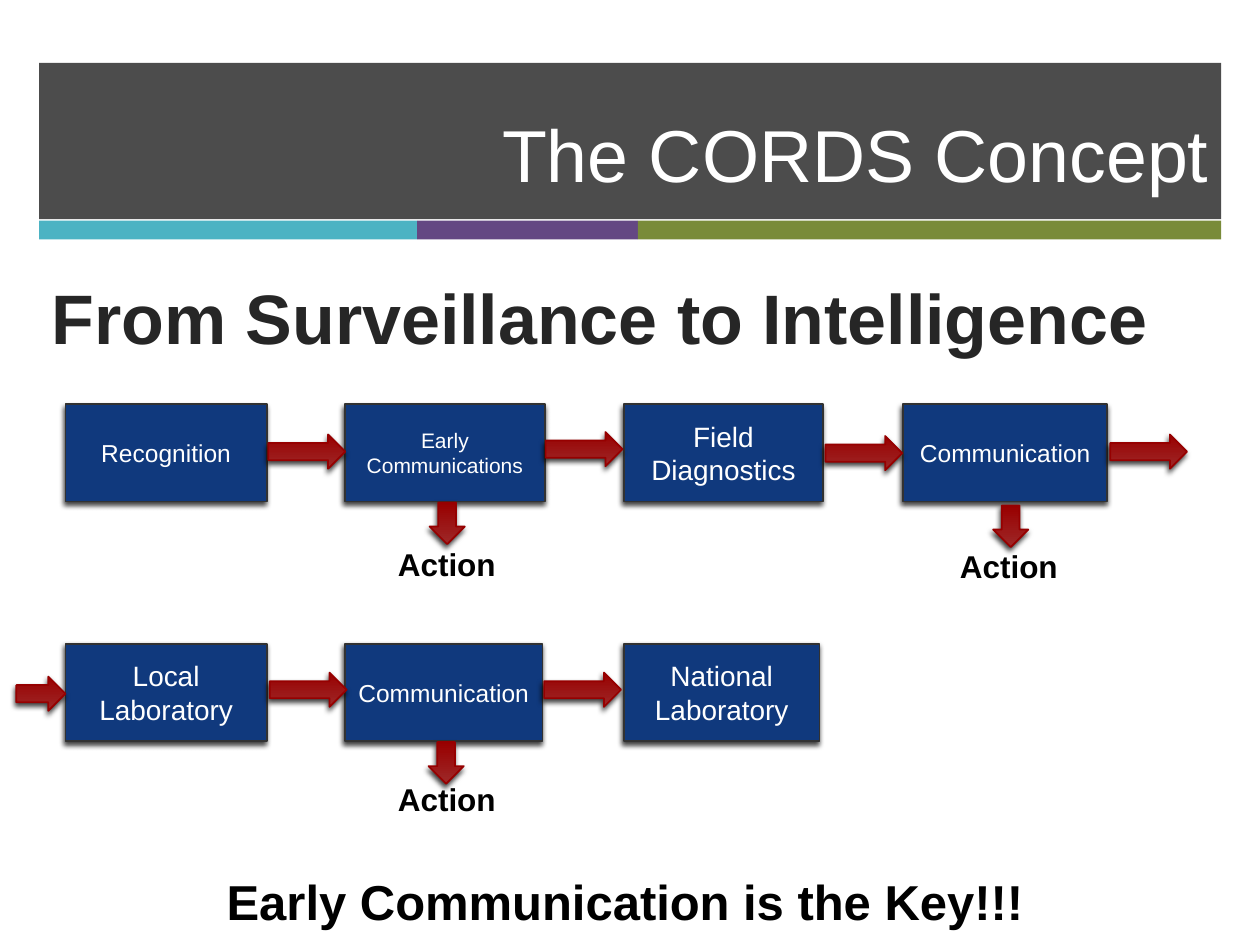
from lxml.etree import SubElement
from pptx import Presentation
from pptx.dml.color import RGBColor
from pptx.enum.shapes import MSO_SHAPE
from pptx.enum.text import MSO_ANCHOR, MSO_AUTO_SIZE, PP_ALIGN
from pptx.oxml.ns import qn
from pptx.util import Cm, Pt

WHITE = RGBColor(0xFF, 0xFF, 0xFF)
BLACK = RGBColor(0, 0, 0)
CHARCOAL = RGBColor(0x4C, 0x4C, 0x4C)
HEADING = RGBColor(0x26, 0x26, 0x26)
TEAL = RGBColor(0x4C, 0xB3, 0xC3)
PURPLE = RGBColor(0x64, 0x47, 0x83)
OLIVE = RGBColor(0x79, 0x8B, 0x39)
NAVY = RGBColor(0x10, 0x39, 0x7D)
BOX_EDGE = RGBColor(0x32, 0x32, 0x32)
RED_LIGHT = RGBColor(0x9D, 0x28, 0x28)
RED = RGBColor(0x99, 0, 0)
RED_EDGE = RGBColor(0x96, 0, 0)

FONT = "Arial"
MARGIN, BAND_WIDTH = 0.79, 23.83
FIRST_COLUMN, COLUMN_STEP = 1.32, 5.63
BOX_HEIGHT = 1.96

# Each row: top, then (lines, font size, box width) per step
STEP_ROWS = [
    (8.15, [(["Recognition"], 14, 4.06),
            (["Early", "Communications"], 12, 4.04),
            (["Field", "Diagnostics"], 16, 4.01),
            (["Communication"], 14, 4.11)]),
    (12.98, [(["Local", "Laboratory"], 16, 4.06),
             (["Communication"], 14, 3.99),
             (["National", "Laboratory"], 16, 3.94)]),
]
# Left, top, width
RIGHT_ARROWS = [(5.41, 8.76, 1.55), (11, 8.71, 1.55), (16.64, 8.79, 1.55),
                (22.38, 8.76, 1.55), (0.33, 13.64, 0.99),
                (5.44, 13.56, 1.55), (10.97, 13.56, 1.55)]
# Arrow left and top, label left and top
ACTIONS = [(8.66, 10.13, 7.77, 10.87), (20.02, 10.19, 19.1, 10.9),
           (8.64, 14.96, 7.77, 15.6)]


def add_run(paragraph, text, size, color, bold=False):
    run = paragraph.add_run()
    run.text = text
    run.font.name = FONT
    run.font.size = Pt(size)
    run.font.bold = bold
    run.font.color.rgb = color


def add_shadow(shape):
    shape.shadow.inherit = False
    effects = shape._element.spPr.find(qn("a:effectLst"))
    outer = SubElement(effects, qn("a:outerShdw"), blurRad=str(Pt(3)),
                       dist=str(Pt(2)), dir=str(110 * 60000), rotWithShape="0")
    tint = SubElement(outer, qn("a:srgbClr"), val=str(BLACK))
    SubElement(tint, qn("a:alpha"), val="75000")


def add_band(slide, left, top, width, height, color):
    band = slide.shapes.add_shape(MSO_SHAPE.RECTANGLE, Cm(left), Cm(top),
                                  Cm(width), Cm(height))
    band.shadow.inherit = False
    band.fill.solid()
    band.fill.fore_color.rgb = color
    band.line.fill.background()


def add_title(slide, text):
    title = slide.shapes.title
    slide.shapes._spTree.append(title._element)  # in front of the header band
    title.left, title.top = Cm(MARGIN), Cm(1.75)
    title.width, title.height = Cm(BAND_WIDTH), Cm(2.69)
    frame = title.text_frame
    frame.auto_size = MSO_AUTO_SIZE.NONE
    frame.vertical_anchor = MSO_ANCHOR.MIDDLE
    frame.paragraphs[0].alignment = PP_ALIGN.RIGHT
    add_run(frame.paragraphs[0], text, 42, WHITE)


def add_step(slide, left, top, width, lines, size):
    step = slide.shapes.add_shape(MSO_SHAPE.RECTANGLE, Cm(left), Cm(top),
                                  Cm(width), Cm(BOX_HEIGHT))
    step.fill.solid()
    step.fill.fore_color.rgb = NAVY
    step.line.color.rgb = BOX_EDGE
    step.line.width = Pt(1)
    add_shadow(step)
    frame = step.text_frame
    frame.margin_left = frame.margin_right = Cm(0.15)
    frame.vertical_anchor = MSO_ANCHOR.MIDDLE
    for number, line in enumerate(lines):
        paragraph = frame.add_paragraph() if number else frame.paragraphs[0]
        paragraph.alignment = PP_ALIGN.CENTER
        add_run(paragraph, line, size, WHITE)


def add_arrow(slide, kind, left, top, width, height):
    arrow = slide.shapes.add_shape(kind, Cm(left), Cm(top), Cm(width), Cm(height))
    arrow.fill.gradient()
    arrow.fill.gradient_angle = 90
    for stop, color in zip(arrow.fill.gradient_stops, (RED_LIGHT, RED)):
        stop.color.rgb = color
    arrow.line.color.rgb = RED_EDGE
    arrow.line.width = Pt(1)
    add_shadow(arrow)


def add_label(slide, left, top, width, height, text, size, color=BLACK):
    label = slide.shapes.add_textbox(Cm(left), Cm(top), Cm(width), Cm(height))
    label.text_frame.word_wrap = False
    label.text_frame.auto_size = MSO_AUTO_SIZE.SHAPE_TO_FIT_TEXT
    add_run(label.text_frame.paragraphs[0], text, size, color, bold=True)


def main():
    deck = Presentation()
    deck.slide_width, deck.slide_height = Cm(25.4), Cm(19.05)
    slide = deck.slides.add_slide(deck.slide_layouts[5])

    # Header with its three-colour strip
    add_band(slide, MARGIN, 1.27, BAND_WIDTH, 3.15, CHARCOAL)
    left = MARGIN
    for width, color in [(7.62, TEAL), (4.45, PURPLE), (11.76, OLIVE)]:
        add_band(slide, left, 4.45, width, 0.38, color)
        left += width
    add_title(slide, "The CORDS Concept")
    add_label(slide, MARGIN, 5.4, BAND_WIDTH, 1.8,
              "From Surveillance to Intelligence", 40, HEADING)

    # Process steps
    for top, steps in STEP_ROWS:
        for column, (lines, size, width) in enumerate(steps):
            add_step(slide, FIRST_COLUMN + column * COLUMN_STEP, top, width,
                     lines, size)

    # Arrows between steps and down to actions
    for left, top, width in RIGHT_ARROWS:
        add_arrow(slide, MSO_SHAPE.RIGHT_ARROW, left, top, width, 0.69)
    for arrow_left, arrow_top, label_left, label_top in ACTIONS:
        add_arrow(slide, MSO_SHAPE.DOWN_ARROW, arrow_left, arrow_top, 0.71, 0.84)
        add_label(slide, label_left, label_top, 2.51, 1.02, "Action", 18)

    # Closing message
    add_label(slide, 4.32, 17.45, 16.76, 1.45,
              "Early Communication is the Key!!!", 28)
    deck.save("out.pptx")


if __name__ == "__main__":
    main()
